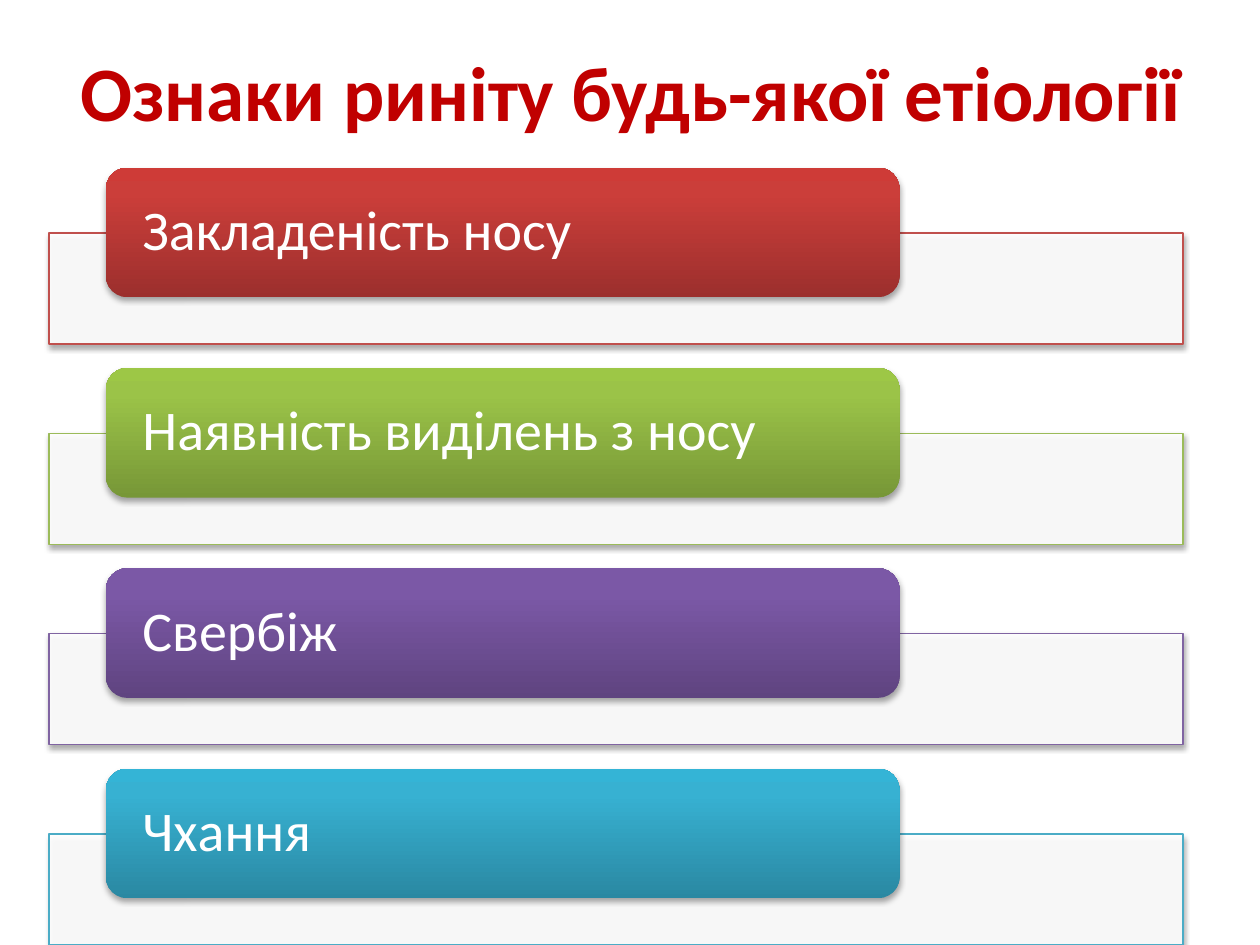
"""Build a slide that lists the signs of rhinitis as four coloured cards."""
from dataclasses import dataclass
from copy import deepcopy

from lxml import etree
from pptx import Presentation
from pptx.dml.color import RGBColor
from pptx.enum.shapes import MSO_SHAPE
from pptx.enum.text import MSO_ANCHOR, PP_ALIGN
from pptx.oxml.ns import qn
from pptx.util import Inches, Pt

RECTANGLE = MSO_SHAPE.RECTANGLE
ROUNDED = MSO_SHAPE.ROUNDED_RECTANGLE
MIDDLE = MSO_ANCHOR.MIDDLE
LEFT, CENTER = PP_ALIGN.LEFT, PP_ALIGN.CENTER

COLORS = {
    "title": "C00000",
    "white": "FFFFFF",
    "shadow": "000000",
    "red": "C0504D",
    "green": "9BBB59",
    "purple": "8064A2",
    "blue": "4BACC6",
}
GRADIENTS = {
    "red": ("9C2F2D", "CB3E3A", "CE3B37"),
    "green": ("779737", "9BC348", "9DC746"),
    "purple": ("5F4480", "7B58A6", "7C57A8"),
    "blue": ("2A88A2", "37B1D2", "34B4D6"),
}
STOP_POSITIONS = (0, 0.8, 1)
FONT = "Calibri"
FIRST_CARD_TOP = 1.33
CARD_PITCH = 1.59
PANEL_OFFSET = 0.52


@dataclass(frozen=True)
class Sign:
    text: str
    color: str


SIGNS = (
    Sign("Закладеність носу", "red"),
    Sign("Наявність виділень з носу", "green"),
    Sign("Свербіж", "purple"),
    Sign("Чхання", "blue"),
)


def write_text(shape, text: str, *, size: float, color: str, bold: bool = False,
               align=LEFT, margin: float = 0.1, line_spacing: float = 1.0) -> None:
    frame = shape.text_frame
    frame.word_wrap = True
    frame.vertical_anchor = MIDDLE
    frame.margin_left = frame.margin_right = Inches(margin)
    frame.margin_top = frame.margin_bottom = 0
    paragraph = frame.paragraphs[0]
    paragraph.alignment = align
    paragraph.line_spacing = line_spacing
    run = paragraph.add_run()
    run.text = text
    run.font.name = FONT
    run.font.size = Pt(size)
    run.font.bold = bold
    run.font.color.rgb = RGBColor.from_string(COLORS[color])


def add_shadow(shape) -> None:
    shape.shadow.inherit = False
    effects = shape.element.spPr.find(qn("a:effectLst"))
    shadow = etree.SubElement(effects, qn("a:outerShdw"), blurRad=str(Pt(3.1)),
                              dist=str(Pt(1.8)), dir="5400000", rotWithShape="0")
    color = etree.SubElement(shadow, qn("a:srgbClr"), val=COLORS["shadow"])
    etree.SubElement(color, qn("a:alpha"), val="35000")


def fill_gradient(shape, colors: tuple[str, ...]) -> None:
    shape.fill.gradient()
    shape.fill.gradient_angle = 90
    stop_list = shape.element.spPr.find(qn("a:gradFill")).find(qn("a:gsLst"))
    stop_list.append(deepcopy(stop_list[-1]))
    for stop, position, color in zip(shape.fill.gradient_stops, STOP_POSITIONS, colors):
        stop.position = position
        stop.color.rgb = RGBColor.from_string(color)


def add_panel(slide, top: float, color: str) -> None:
    panel = slide.shapes.add_shape(RECTANGLE, Inches(0.39), Inches(top), Inches(9), Inches(0.88))
    panel.fill.solid()
    panel.fill.fore_color.rgb = RGBColor.from_string(COLORS["white"])
    fill_color = panel.element.spPr.find(qn("a:solidFill")).find(qn("a:srgbClr"))
    etree.SubElement(fill_color, qn("a:alpha"), val="90000")
    panel.line.color.rgb = RGBColor.from_string(COLORS[color])
    panel.line.width = Pt(0.75)
    add_shadow(panel)


def add_card(slide, top: float, sign: Sign) -> None:
    card = slide.shapes.add_shape(ROUNDED, Inches(0.84), Inches(top), Inches(6.3), Inches(1.03))
    fill_gradient(card, GRADIENTS[sign.color])
    card.line.fill.background()
    add_shadow(card)
    write_text(card, sign.text, size=32, color="white", margin=0.24, line_spacing=0.9)


def main() -> None:
    presentation = Presentation()
    presentation.slide_width, presentation.slide_height = Inches(10), Inches(7.5)
    slide = presentation.slides.add_slide(presentation.slide_layouts.get_by_name("Title Only"))

    title = slide.shapes.title
    title.left, title.top = Inches(0.51), Inches(0.21)
    title.width, title.height = Inches(9), Inches(1.02)
    write_text(title, "Ознаки риніту будь-якої етіології", size=44, color="title",
               bold=True, align=CENTER)

    for index, sign in enumerate(SIGNS):
        top = FIRST_CARD_TOP + index * CARD_PITCH
        add_panel(slide, top + PANEL_OFFSET, sign.color)
        add_card(slide, top, sign)

    presentation.save("out.pptx")


if __name__ == "__main__":
    main()
